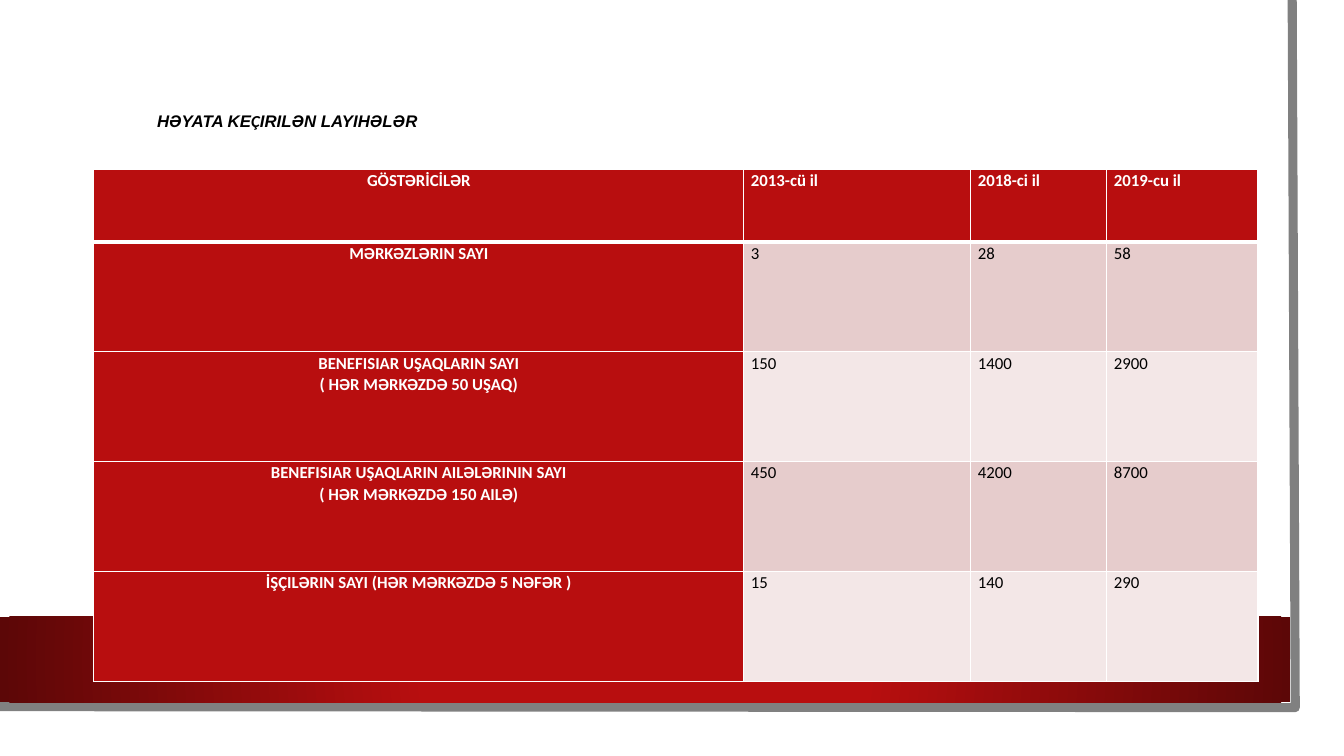
from dataclasses import dataclass

from lxml import etree
from pptx import Presentation
from pptx.dml.color import RGBColor
from pptx.enum.shapes import MSO_SHAPE as Preset
from pptx.enum.text import MSO_ANCHOR as Anchor, PP_ALIGN as Align
from pptx.oxml import parse_xml
from pptx.oxml.ns import nsdecls, qn
from pptx.shapes.autoshape import Shape
from pptx.slide import Slide
from pptx.table import _Cell as Cell
from pptx.util import Inches, Length, Pt

WHITE = RGBColor(0xFF, 0xFF, 0xFF)
BLACK = RGBColor(0x00, 0x00, 0x00)
GREY = RGBColor(0x80, 0x80, 0x80)
RED = RGBColor(0xB8, 0x0E, 0x0F)
DARK_RED = RGBColor(0x5C, 0x07, 0x07)
ROSE = RGBColor(0xE6, 0xCC, 0xCC)
PALE_ROSE = RGBColor(0xF3, 0xE7, 0xE7)

SLIDE_WIDTH, SLIDE_HEIGHT = Inches(13.33), Inches(7.5)

TITLE_RUNS = (("HƏYATA KE", "Arial"), ("Ç", "Calibri"), ("IRILƏN LAYIHƏLƏR", "Arial"))
COLUMN_WIDTHS = (48.37, 16.88, 10.13, 11.25)
HEADER_HEIGHT, BODY_HEIGHT = 9.6, 14.53


@dataclass(frozen=True)
class Area:
    """A place on the slide, in percent of its width and height."""
    left: float
    top: float
    width: float
    height: float

    def box(self) -> tuple[Length, Length, Length, Length]:
        return across(self.left), down(self.top), across(self.width), down(self.height)


@dataclass(frozen=True)
class Indicator:
    """A table row; a line break in the label starts a new paragraph."""
    label: str
    values: tuple[str, str, str]


INDICATORS = (
    Indicator("GÖSTƏRİCİLƏR", ("2013-cü il", "2018-ci il", "2019-cu il")),
    Indicator("MƏRKƏZLƏRIN SAYI", ("3", "28", "58")),
    Indicator("BENEFISIAR UŞAQLARIN SAYI\n( HƏR MƏRKƏZDƏ 50 UŞAQ)", ("150", "1400", "2900")),
    Indicator("BENEFISIAR UŞAQLARIN AILƏLƏRININ SAYI\n( HƏR MƏRKƏZDƏ 150 AILƏ)",
              ("450", "4200", "8700")),
    Indicator("İŞÇILƏRIN SAYI (HƏR MƏRKƏZDƏ 5 NƏFƏR )", ("15", "140", "290")),
)

PAGE = Area(0, 0, 98.25, 96.93)
BAND = Area(0, 81.6, 96.02, 11.33)
TITLE = Area(10.95, 14, 56.25, 10.8)
TABLE = Area(6.98, 22.4, sum(COLUMN_WIDTHS),
             HEADER_HEIGHT + BODY_HEIGHT * (len(INDICATORS) - 1))
FRAME_POINTS = ((96.15, 0), (96.38, 93.6), (-0.2, 93.47))


def across(percent: float) -> Length:
    return Length(round(SLIDE_WIDTH * percent / 100))


def down(percent: float) -> Length:
    return Length(round(SLIDE_HEIGHT * percent / 100))


def add_rectangle(slide: Slide, area: Area) -> Shape:
    shape = slide.shapes.add_shape(Preset.RECTANGLE, *area.box())
    shape.shadow.inherit = False
    shape.fill.solid()
    shape.fill.fore_color.rgb = WHITE
    shape.line.fill.background()
    return shape


def add_frame(slide: Slide) -> None:
    """Draw the grey edge along the right and bottom of the page."""
    start, *others = [(across(x), down(y)) for x, y in FRAME_POINTS]
    builder = slide.shapes.build_freeform(*start)
    builder.add_line_segments(others, close=False)
    frame = builder.convert_to_shape()
    frame.shadow.inherit = False
    frame.fill.background()
    frame.line.color.rgb = GREY
    frame.line.width = Pt(6.5)


def add_band(slide: Slide) -> None:
    band = add_rectangle(slide, BAND)
    solid = band._element.spPr.find(qn("a:solidFill"))
    gradient = parse_xml(
        f'<a:gradFill {nsdecls("a")} rotWithShape="1"><a:gsLst>'
        f'<a:gs pos="34000"><a:srgbClr val="{RED}"/></a:gs>'
        f'<a:gs pos="100000"><a:srgbClr val="{DARK_RED}"/></a:gs></a:gsLst>'
        '<a:path path="circle"><a:fillToRect l="50000" t="50000" r="50000" b="50000"/>'
        '</a:path></a:gradFill>')
    solid.getparent().replace(solid, gradient)


def add_title(slide: Slide) -> None:
    frame = slide.shapes.add_textbox(*TITLE.box()).text_frame
    frame.word_wrap = True
    frame.vertical_anchor = Anchor.TOP
    paragraph = frame.paragraphs[0]
    paragraph.font.size = Pt(12)
    paragraph.font.bold = paragraph.font.italic = True
    paragraph.font.color.rgb = BLACK
    for text, font_name in TITLE_RUNS:
        run = paragraph.add_run()
        run.text = text
        run.font.name = font_name


def set_borders(cell: Cell, is_header: bool) -> None:
    properties = cell._tc.get_or_add_tcPr()
    for side in ("L", "R", "T", "B"):
        width = Pt(3) if is_header and side == "B" else Pt(1)
        border = etree.SubElement(properties, qn(f"a:ln{side}"), w=str(width))
        fill = etree.SubElement(border, qn("a:solidFill"))
        etree.SubElement(fill, qn("a:srgbClr"), val=str(WHITE))


def fill_cell(cell: Cell, text: str, row: int, column: int) -> None:
    is_heading = row == 0 or column == 0
    set_borders(cell, row == 0)
    cell.fill.solid()
    cell.fill.fore_color.rgb = RED if is_heading else ROSE if row % 2 else PALE_ROSE
    cell.margin_left = cell.margin_right = Inches(0.07)
    cell.margin_top = cell.margin_bottom = 0
    cell.text_frame.text = text
    for paragraph in cell.text_frame.paragraphs:
        paragraph.alignment = Align.JUSTIFY if column else Align.CENTER
        paragraph.line_spacing = 1.07
        paragraph.font.name = "Calibri"
        paragraph.font.size = Pt(12)
        paragraph.font.bold = is_heading
        paragraph.font.color.rgb = WHITE if is_heading else BLACK


def add_indicator_table(slide: Slide) -> None:
    table = slide.shapes.add_table(len(INDICATORS), len(COLUMN_WIDTHS), *TABLE.box()).table
    for column, width in zip(table.columns, COLUMN_WIDTHS):
        column.width = across(width)
    for row, indicator in enumerate(INDICATORS):
        table.rows[row].height = down(BODY_HEIGHT if row else HEADER_HEIGHT)
        for column, text in enumerate((indicator.label, *indicator.values)):
            fill_cell(table.cell(row, column), text, row, column)


def main() -> None:
    presentation = Presentation()
    presentation.slide_width, presentation.slide_height = SLIDE_WIDTH, SLIDE_HEIGHT
    slide = presentation.slides.add_slide(presentation.slide_layouts[6])
    add_rectangle(slide, PAGE)
    add_frame(slide)
    add_band(slide)
    add_indicator_table(slide)
    add_title(slide)
    presentation.save("out.pptx")


if __name__ == "__main__":
    main()
